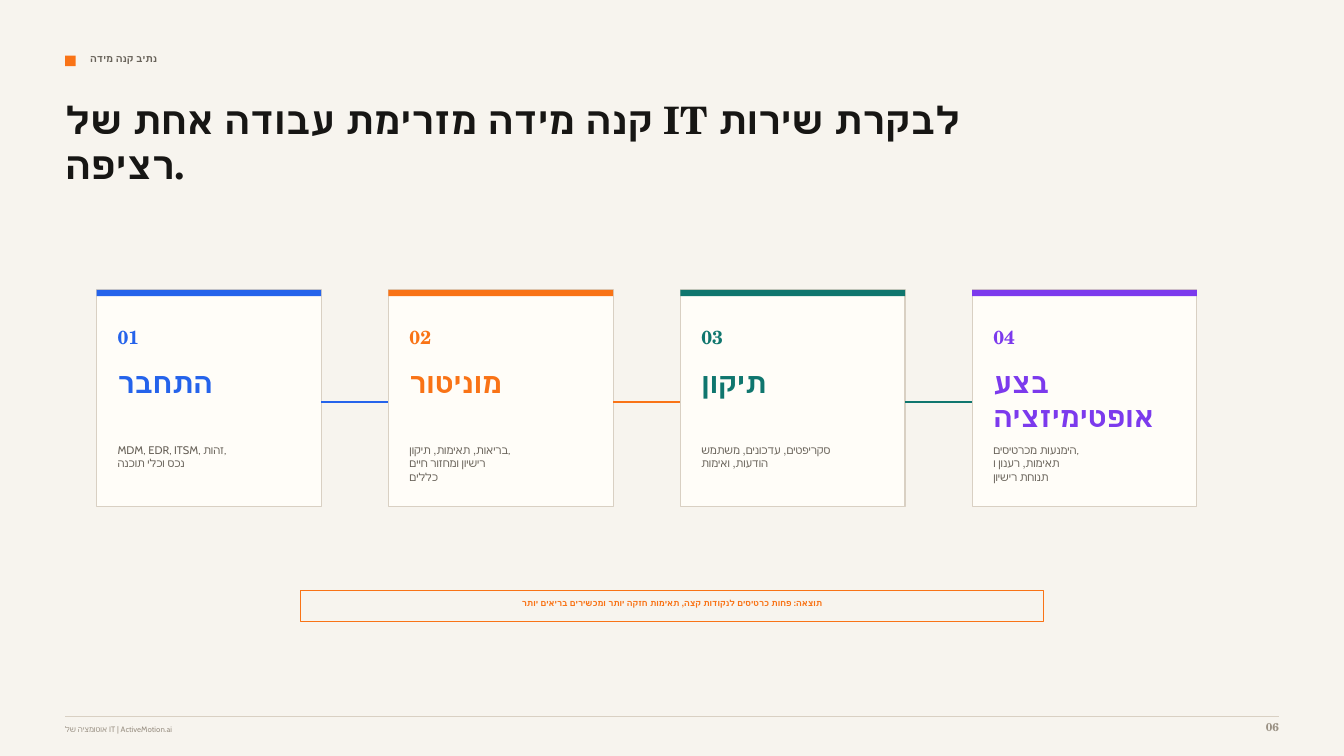
from lxml.etree import SubElement
from pptx import Presentation
from pptx.dml.color import RGBColor
from pptx.enum.shapes import MSO_CONNECTOR, MSO_SHAPE
from pptx.enum.text import PP_ALIGN
from pptx.oxml.ns import qn
from pptx.util import Pt

# Content
SECTION = "נתיב קנה מידה"
TITLE = "קנה מידה מזרימת עבודה אחת של IT לבקרת שירות רציפה."
STEPS = [
    ("התחבר", "2563EB", ["MDM, EDR, ITSM, זהות,", "נכס וכלי תוכנה"]),
    ("מוניטור", "F97316", ["בריאות, תאימות, תיקון,", "רישיון ומחזור חיים", "כללים"]),
    ("תיקון", "0F766E", ["סקריפטים, עדכונים, משתמש", "הודעות, ואימות"]),
    ("בצע אופטימיזציה", "7C3AED", ["הימנעות מכרטיסים,", "תאימות, רענון ו", "תנוחת רישיון"]),
]
RESULT = "תוצאה: פחות כרטיסים לנקודות קצה, תאימות חזקה יותר ומכשירים בריאים יותר"
FOOTER = "אוטומציה של IT | ActiveMotion.ai"
PAGE = "06"

# Style
SANS, SERIF = "Cabin", "TeX Gyre Schola"
PAPER, CARD, RULE = "F7F4EE", "FFFDF8", "D9D0C3"
INK, BODY, MUTED, ACCENT = "171614", "69635A", "9A9184", "F97316"

# Layout, in points
SLIDE_W, SLIDE_H = 960, 540
MARGIN = 46.5
CARD_X, CARD_Y, CARD_W, CARD_H = 69, 207, 160.5, 154.8
STEP_X = 208.5
PAD = 15
LINK_Y = 287.2
RULE_Y = 511.7

prs = Presentation()
prs.slide_width, prs.slide_height = Pt(SLIDE_W), Pt(SLIDE_H)
s = prs.slides.add_slide(prs.slide_layouts[6])


def color(hex_string):
    return RGBColor.from_string(hex_string)


def add_text(lines, x, y, w, h, size=8, font=SANS, fill=BODY, bold=False, align=None):
    tf = s.shapes.add_textbox(Pt(x), Pt(y), Pt(w), Pt(h)).text_frame
    tf.word_wrap = True
    tf.margin_left = tf.margin_right = tf.margin_top = tf.margin_bottom = 0
    for i, line in enumerate([lines] if isinstance(lines, str) else lines):
        p = tf.add_paragraph() if i else tf.paragraphs[0]
        p.alignment = align
        r = p.add_run()
        r.text = line
        r.font.size, r.font.bold, r.font.name = Pt(size), bold, font
        r.font.color.rgb = color(fill)


def add_rect(x, y, w, h, fill=None, line=None):
    sp = s.shapes.add_shape(MSO_SHAPE.RECTANGLE, Pt(x), Pt(y), Pt(w), Pt(h))
    sp.shadow.inherit = False
    if fill:
        sp.fill.solid()
        sp.fill.fore_color.rgb = color(fill)
    else:
        sp.fill.background()
    if line:
        sp.line.color.rgb = color(line)
        sp.line.width = Pt(0.75)
    else:
        sp.line.fill.background()


def add_line(x1, x2, y, line, width):
    cxn = s.shapes.add_connector(MSO_CONNECTOR.STRAIGHT, Pt(x1), Pt(y), Pt(x2), Pt(y))
    cxn.line.color.rgb = color(line)
    cxn.line.width = Pt(width)
    SubElement(cxn._element.spPr, qn("a:effectLst"))


# Background and heading
add_rect(0, 0, SLIDE_W, SLIDE_H, fill=PAPER)
add_rect(MARGIN, 39.7, 7.5, 7.5, fill=ACCENT)
add_text(SECTION, 64.5, 37.5, 465, 13.5, size=7.1, bold=True)
add_text(TITLE, MARGIN, 69, 713, 73.5, size=27, font=SERIF, fill=INK, bold=True)

# Step cards and the links between them
for i, (name, hue, details) in enumerate(STEPS):
    x = CARD_X + i * STEP_X
    add_rect(x, CARD_Y, CARD_W, CARD_H, fill=CARD, line=RULE)
    add_rect(x, CARD_Y, CARD_W, 4.5, fill=hue)
    add_text(f"{i + 1:02d}", x + PAD, 232.5, 33, 18, size=13.5, font=SERIF, fill=hue, bold=True)
    add_text(name, x + PAD, 261, 120, 33, size=20.2, font=SERIF, fill=hue, bold=True)
    add_text(details, x + PAD, 316.8, 124.5, 33, size=7.9)
    if i < len(STEPS) - 1:
        add_line(x + CARD_W, x + STEP_X, LINK_Y, hue, 1.5)

# Result
add_rect(214.5, 421.5, 531, 22.5, line=ACCENT)
add_text(RESULT, 223.5, 427.5, 513, 10, size=6, fill=ACCENT, bold=True, align=PP_ALIGN.CENTER)

# Footer
add_line(MARGIN, SLIDE_W - MARGIN, RULE_Y, RULE, 0.75)
add_text(FOOTER, MARGIN, 517.5, 570, 10.5, size=5.6, fill=MUTED)
add_text(PAGE, SLIDE_W - MARGIN - 36, 514.5, 36, 13.5, size=8.2, font=SERIF, fill=MUTED,
         bold=True, align=PP_ALIGN.RIGHT)

prs.save("out.pptx")
